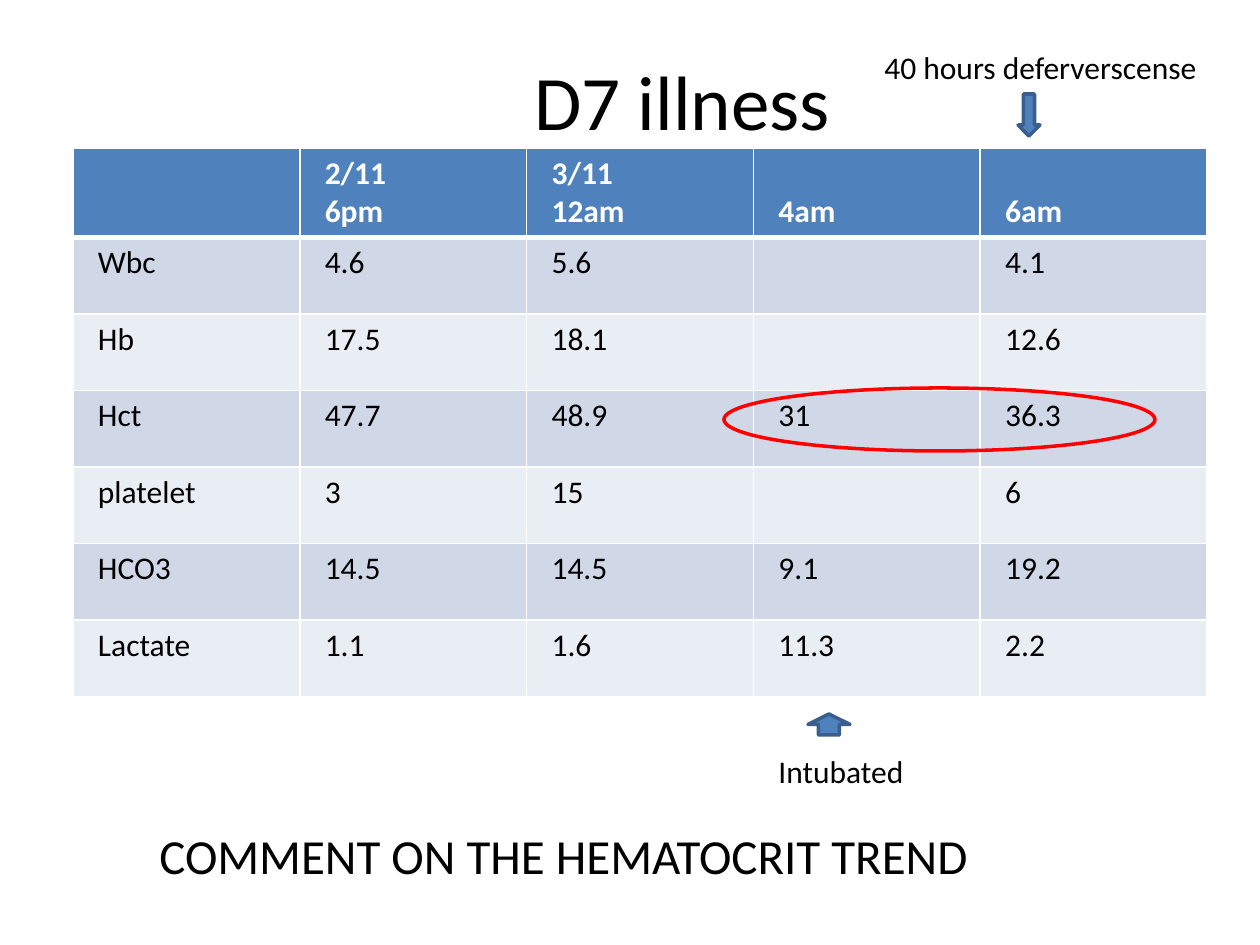
"""Build the D7 illness slide: a blood result table with clinical events marked."""
from lxml import etree
from pptx import Presentation
from pptx import util as u
from pptx.dml.color import RGBColor
from pptx.enum import shapes, text
from pptx.oxml.ns import qn

PX = 914400 / 126
FONT = "Calibri"
COLORS = {
    "black": "000000", "white": "FFFFFF", "header": "4F81BD", "outline": "3A5F8C",
    "odd": "D0D8E8", "even": "E9EDF4", "highlight": "FF0000",
}

TITLE = "D7 illness"
TITLE_BOX = (63, 21, 1134, 158)
TITLE_INDENT = 117
ROWS = [
    ("", "2/11\n6pm", "3/11\n12am", "4am", "6am"),
    ("Wbc", "4.6", "5.6", "", "4.1"),
    ("Hb", "17.5", "18.1", "", "12.6"),
    ("Hct", "47.7", "48.9", "31", "36.3"),
    ("platelet", "3", "15", "", "6"),
    ("HCO3", "14.5", "14.5", "9.1", "19.2"),
    ("Lactate", "1.1", "1.6", "11.3", "2.2"),
]
TABLE_BOX = (73, 148, 1134, 547)
HEADER_HEIGHT = 88
CELL_MARGIN = 25
LABELS = [
    ("40 hours deferverscense", (872, 42, 357, 50), 18),
    ("COMMENT ON THE HEMATOCRIT TREND", (147, 819, 966, 72), 28),
    ("Intubated", (766, 746, 210, 53), 18),
]
MARKERS = [
    (shapes.MSO_SHAPE.DOWN_ARROW, (1018, 94, 22, 42), "header", "outline"),
    (shapes.MSO_SHAPE.UP_ARROW, (808, 714, 42, 21), "header", "outline"),
    (shapes.MSO_SHAPE.OVAL, (724, 388, 431, 63), None, "highlight"),
]


def px(length):
    return u.Emu(round(length * PX))


def place(box):
    return [px(length) for length in box]


def color(name):
    return RGBColor.from_string(COLORS[name])


def format_text(frame, size, color_name="black", bold=False):
    for paragraph in frame.paragraphs:
        for run in paragraph.runs:
            run.font.name = FONT
            run.font.size = u.Pt(size)
            run.font.bold = bold
            run.font.color.rgb = color(color_name)


def add_borders(cell, top, bottom):
    properties = cell._tc.get_or_add_tcPr()
    for side, width in (("L", 1), ("R", 1), ("T", top), ("B", bottom)):
        line = etree.SubElement(properties, qn(f"a:ln{side}"), w=str(u.Pt(width)))
        fill = etree.SubElement(line, qn("a:solidFill"))
        etree.SubElement(fill, qn("a:srgbClr"), val=COLORS["white"])


def add_title(slide):
    title = slide.shapes.title
    title.left, title.top, title.width, title.height = place(TITLE_BOX)
    frame = title.text_frame
    frame.text = TITLE
    frame.margin_left = px(TITLE_INDENT)
    frame.vertical_anchor = text.MSO_ANCHOR.MIDDLE
    frame.paragraphs[0].alignment = text.PP_ALIGN.CENTER
    format_text(frame, 44)


def add_results(slide):
    table = slide.shapes.add_table(len(ROWS), len(ROWS[0]), *place(TABLE_BOX)).table
    body_height = (TABLE_BOX[3] - HEADER_HEIGHT) / (len(ROWS) - 1)
    for column in table.columns:
        column.width = px(TABLE_BOX[2] / len(ROWS[0]))
    for row_index, values in enumerate(ROWS):
        header = row_index == 0
        table.rows[row_index].height = px(HEADER_HEIGHT if header else body_height)
        fill_name = "header" if header else ("even", "odd")[row_index % 2]
        for column_index, value in enumerate(values):
            cell = table.cell(row_index, column_index)
            add_borders(cell, 3 if row_index == 1 else 1, 3 if header else 1)
            cell.fill.solid()
            cell.fill.fore_color.rgb = color(fill_name)
            cell.margin_left = cell.margin_right = px(CELL_MARGIN)
            cell.vertical_anchor = text.MSO_ANCHOR.BOTTOM if header else text.MSO_ANCHOR.TOP
            cell.text_frame.text = value
            format_text(cell.text_frame, 18, "white" if header else "black", header)


def add_label(slide, wording, box, size):
    frame = slide.shapes.add_textbox(*place(box)).text_frame
    frame.word_wrap = True
    frame.text = wording
    format_text(frame, size)


def add_marker(slide, kind, box, fill_name, line_name):
    shape = slide.shapes.add_shape(kind, *place(box))
    shape.shadow.inherit = False
    if fill_name:
        shape.fill.solid()
        shape.fill.fore_color.rgb = color(fill_name)
    else:
        shape.fill.background()
    shape.line.color.rgb = color(line_name)
    shape.line.width = u.Pt(2)


def main():
    presentation = Presentation()
    presentation.slide_width, presentation.slide_height = px(1260), px(945)
    slide = presentation.slides.add_slide(presentation.slide_layouts[5])
    add_title(slide)
    add_results(slide)
    for label in LABELS:
        add_label(slide, *label)
    for marker in MARKERS:
        add_marker(slide, *marker)
    presentation.save("out.pptx")


if __name__ == "__main__":
    main()
